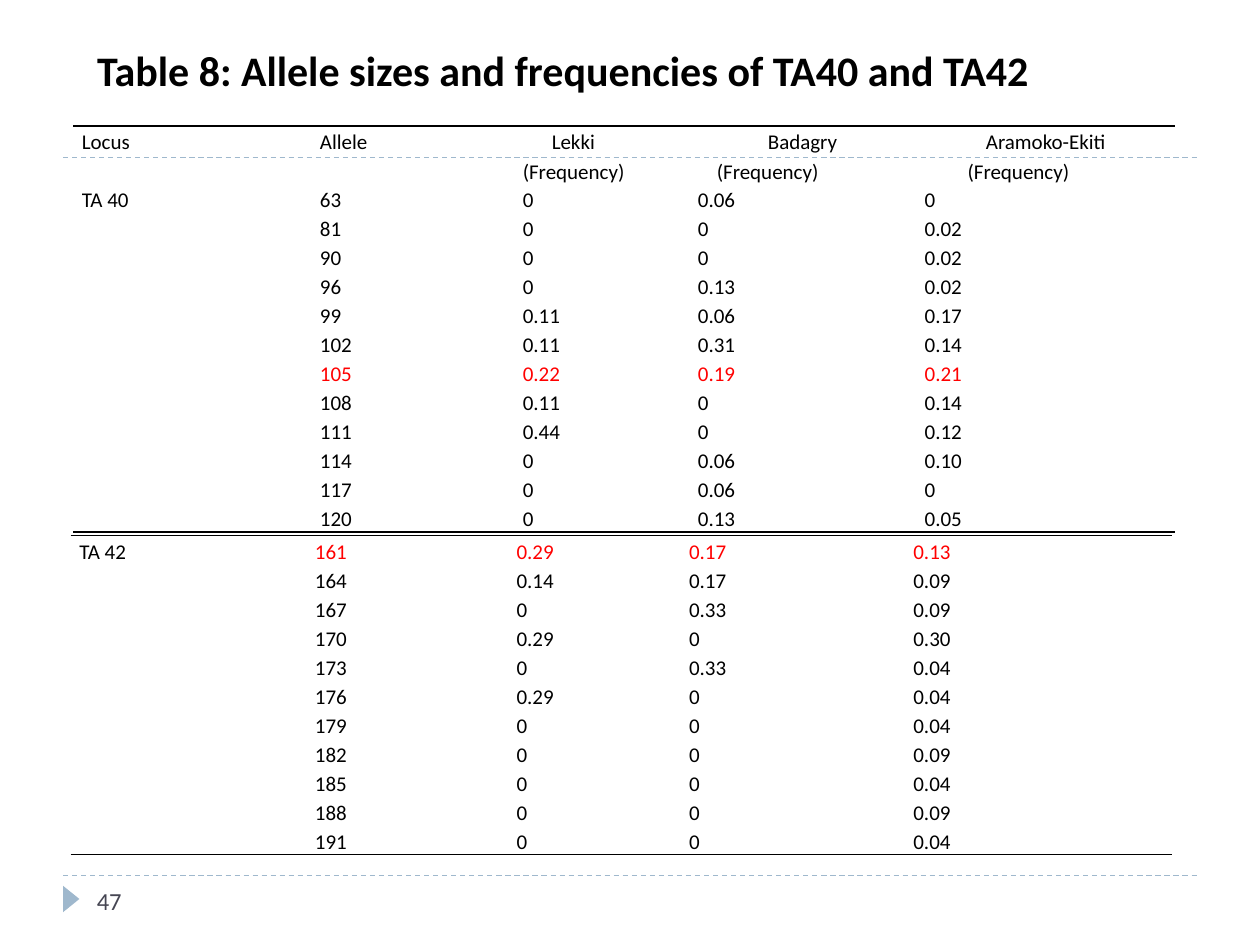
import pptx
import pptx.dml.color
import pptx.enum.dml
import pptx.enum.shapes
import pptx.enum.text
import pptx.oxml.ns
import pptx.util
from lxml import etree

Inches = pptx.util.Inches
Pt = pptx.util.Pt
qn = pptx.oxml.ns.qn
ALIGN = pptx.enum.text.PP_ALIGN
MIDDLE = pptx.enum.text.MSO_ANCHOR.MIDDLE

COLORS = {"text": "000000", "highlight": "FF0000", "accent": "9FB8CD", "number": "464653"}
NO_TABLE_STYLE = "{2D5ABB26-0587-4C30-8999-92F81FD0307C}"

# Header cells: paragraphs of (text, alignment, first-line indent in inches)
HEADER = [
    [("Locus", ALIGN.LEFT, 0)],
    [("Allele", ALIGN.LEFT, 0)],
    [("Lekki (Frequency)", ALIGN.LEFT, 0.23)],
    [("Badagry", ALIGN.CENTER, 0), ("(Frequency)", ALIGN.LEFT, 0.15)],
    [("Aramoko-Ekiti", ALIGN.CENTER, 0), ("(Frequency)", ALIGN.LEFT, 0.34)],
]

# Allele size, then frequency at Lekki, Badagry and Aramoko-Ekiti
TA40 = """63 0 0.06 0
81 0 0 0.02
90 0 0 0.02
96 0 0.13 0.02
99 0.11 0.06 0.17
102 0.11 0.31 0.14
105 0.22 0.19 0.21
108 0.11 0 0.14
111 0.44 0 0.12
114 0 0.06 0.10
117 0 0.06 0
120 0 0.13 0.05"""
TA42 = """161 0.29 0.17 0.13
164 0.14 0.17 0.09
167 0 0.33 0.09
170 0.29 0 0.30
173 0 0.33 0.04
176 0.29 0 0.04
179 0 0 0.04
182 0 0 0.09
185 0 0 0.04
188 0 0 0.09
191 0 0 0.04"""
HIGHLIGHTED_ALLELES = {"105", "161"}


def locus_rows(locus, listing):
    """Cells of one locus, with its name in the first row only."""
    rows = []
    for index, line in enumerate(listing.splitlines()):
        values = [locus if index == 0 else ""] + line.split()
        rows.append([[(value, ALIGN.LEFT, 0)] if value else [] for value in values])
    return rows


class SlideBuilder:
    font_name = "Calibri"
    cell_size = 12
    row_height = 0.23

    def __init__(self, slide):
        self.slide = slide

    def format_run(self, run, size, color="text", bold=False):
        values = {"name": self.font_name, "size": Pt(size), "bold": bold}
        for name, value in values.items():
            setattr(run.font, name, value)
        run.font.color.rgb = pptx.dml.color.RGBColor.from_string(COLORS[color])

    def set_text(self, shape, text, size, color="text", bold=False, wrap=True):
        frame = shape.text_frame
        values = {"word_wrap": wrap, "vertical_anchor": MIDDLE}
        for name, value in values.items():
            setattr(frame, name, value)
        paragraph = frame.paragraphs[0]
        paragraph.alignment = ALIGN.LEFT
        run = paragraph.add_run()
        run.text = text
        self.format_run(run, size, color, bold)

    def title(self, text, left, top, width, height):
        shape = self.slide.shapes.title
        box = {"left": left, "top": top, "width": width, "height": height}
        for name, value in box.items():
            setattr(shape, name, Inches(value))
        self.set_text(shape, text, 24, bold=True, wrap=False)

    def text(self, text, left, top, width, height, size, color):
        shape = self.slide.shapes.add_textbox(*map(Inches, (left, top, width, height)))
        self.set_text(shape, text, size, color)

    def dashed_line(self, left, right, y):
        line = self.slide.shapes.add_connector(
            pptx.enum.shapes.MSO_CONNECTOR.STRAIGHT, *map(Inches, (left, y, right, y)))
        line.line.color.rgb = pptx.dml.color.RGBColor.from_string(COLORS["accent"])
        line.line.width = Pt(0.75)
        line.line.dash_style = pptx.enum.dml.MSO_LINE.DASH
        etree.SubElement(line._element.spPr, qn("a:effectLst"))

    def marker(self, left, top, width, height):
        shape = self.slide.shapes.add_shape(
            pptx.enum.shapes.MSO_SHAPE.ISOSCELES_TRIANGLE,
            *map(Inches, (left, top, width, height)))
        shape.rotation = 90
        shape.shadow.inherit = False
        shape.fill.solid()
        shape.fill.fore_color.rgb = pptx.dml.color.RGBColor.from_string(COLORS["accent"])
        shape.line.fill.background()

    def border(self, cell, tag):
        line = etree.SubElement(cell._tc.get_or_add_tcPr(), qn(tag), w=str(Pt(1)))
        fill = etree.SubElement(line, qn("a:solidFill"))
        etree.SubElement(fill, qn("a:srgbClr"), val=COLORS["text"])

    def fill_cell(self, cell, paragraphs, color):
        margins = {"margin_left": 0.07, "margin_right": 0.07, "margin_top": 0, "margin_bottom": 0}
        for name, value in margins.items():
            setattr(cell, name, Inches(value))
        cell.fill.background()
        frame = cell.text_frame
        if not paragraphs:
            # Keep empty cells as low as the filled ones
            etree.SubElement(frame.paragraphs[0]._p, qn("a:endParaRPr"),
                             sz=str(self.cell_size * 100))
        for index, (text, alignment, indent) in enumerate(paragraphs):
            paragraph = frame.add_paragraph() if index else frame.paragraphs[0]
            paragraph.alignment = alignment
            paragraph.line_spacing = 1.15
            if indent:
                paragraph._p.get_or_add_pPr().set("indent", str(Inches(indent)))
            run = paragraph.add_run()
            run.text = text
            self.format_run(run, self.cell_size, color)

    def table(self, rows, left, top, column_widths):
        heights = [self.row_height * max(1, *map(len, row)) for row in rows]
        frame = self.slide.shapes.add_table(
            len(rows), len(column_widths),
            *map(Inches, (left, top, sum(column_widths), sum(heights))))
        table = frame.table
        table.first_row = table.horz_banding = False
        table._tbl.tblPr.find(qn("a:tableStyleId")).text = NO_TABLE_STYLE
        for column, width in zip(table.columns, column_widths):
            column.width = Inches(width)
        for row_index, row in enumerate(rows):
            table.rows[row_index].height = Inches(heights[row_index])
            highlighted = row[1][0][0] in HIGHLIGHTED_ALLELES
            for column_index, paragraphs in enumerate(row):
                cell = table.cell(row_index, column_index)
                if row_index == 0:
                    self.border(cell, "a:lnT")
                if row_index == len(rows) - 1:
                    self.border(cell, "a:lnB")
                color = "highlight" if highlighted and column_index else "text"
                self.fill_cell(cell, paragraphs, color)


def main():
    presentation = pptx.Presentation()
    presentation.slide_width = Inches(10)
    presentation.slide_height = Inches(7.5)
    builder = SlideBuilder(presentation.slides.add_slide(presentation.slide_layouts[5]))

    # Rules, page marker and slide number
    for y in (6.95, 1.25):
        builder.dashed_line(0.5, 9.5, y)
    builder.marker(0.46, 7.07, 0.21, 0.13)
    builder.text("47", 0.67, 6.95, 2.17, 0.4, 14, "number")

    # One table per locus
    builder.table([HEADER] + locus_rows("TA 40", TA40), 0.58, 1, [1.89, 1.61, 1.39, 1.8, 2.06])
    builder.table(locus_rows("TA 42", TA42), 0.56, 4.25, [1.87, 1.6, 1.37, 1.78, 2.12])

    # Title
    builder.title("Table 8: Allele sizes and frequencies of TA40 and TA42", 0.67, 0.3, 8.54, 0.5)

    presentation.save("out.pptx")


if __name__ == "__main__":
    main()
